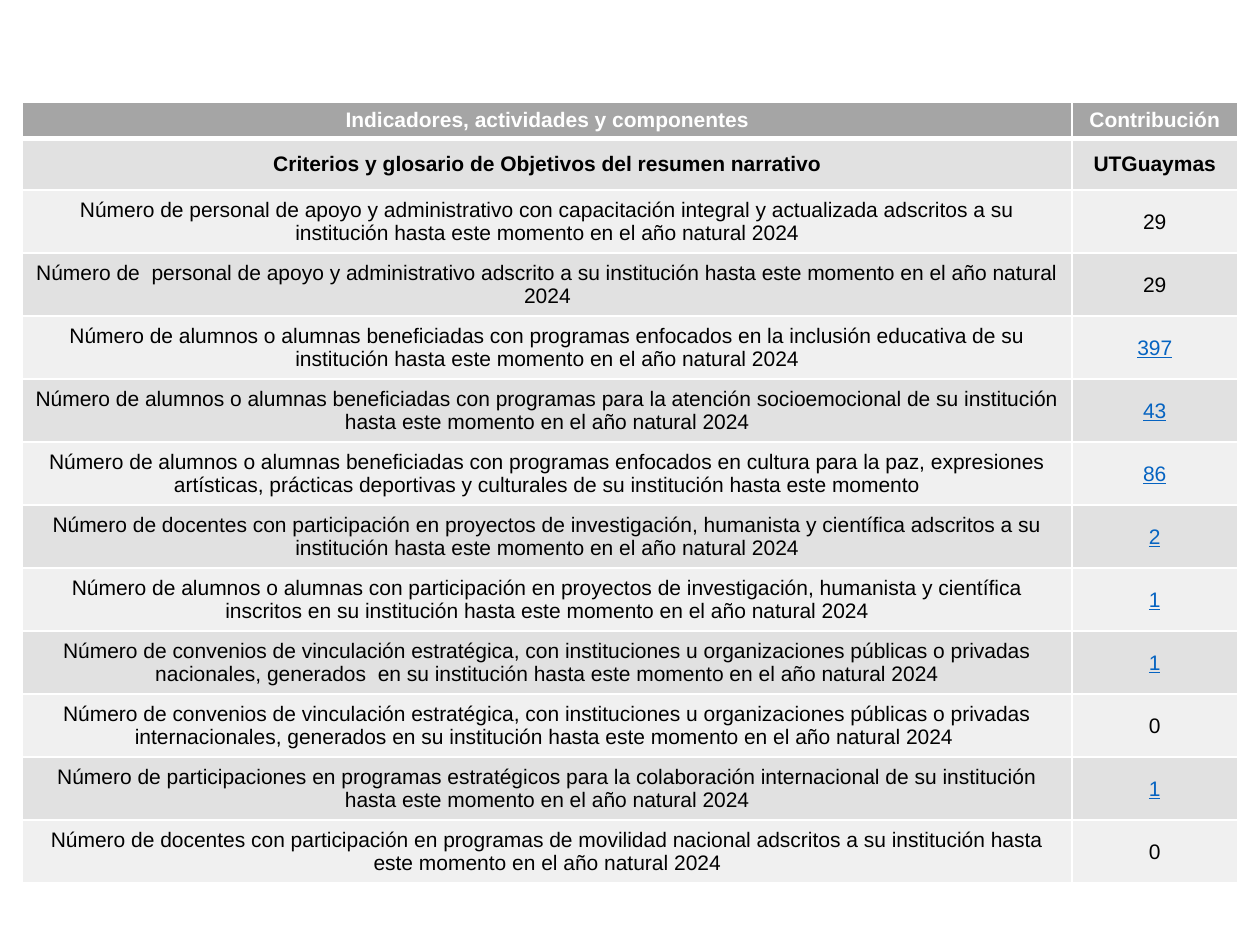
from lxml.etree import SubElement
from pptx import Presentation
from pptx.dml.color import RGBColor
from pptx.enum.text import MSO_ANCHOR, PP_ALIGN
from pptx.oxml.ns import qn
from pptx.util import Inches, Pt


def rgb(value):
    return RGBColor.from_string(value)


def add_border(tc_pr, side, points):
    ln = SubElement(tc_pr, qn(f"a:ln{side}"), w=str(Pt(points)))
    fill = SubElement(ln, qn("a:solidFill"))
    SubElement(fill, qn("a:srgbClr"), val="FFFFFF")


prs = Presentation()
prs.slide_width, prs.slide_height = Inches(10), Inches(7.5)
s = prs.slides.add_slide(prs.slide_layouts[6])

# Content: label, value, whether the value is styled as a link
until = "hasta este momento en el año natural 2024"
support = "Número de personal de apoyo y administrativo"
students = "Número de alumnos o alumnas"
teachers = "Número de docentes con participación en"
research = "proyectos de investigación, humanista y científica"
agreements = ("Número de convenios de vinculación estratégica, con instituciones "
              "u organizaciones públicas o privadas")
rows = [
    ("Indicadores, actividades y componentes", "Contribución", False),
    ("Criterios y glosario de Objetivos del resumen narrativo", "UTGuaymas", False),
    (f"{support} con capacitación integral y actualizada adscritos a su institución {until}",
     "29", False),
    (f"Número de  personal de apoyo y administrativo adscrito a su institución {until}",
     "29", False),
    (f"{students} beneficiadas con programas enfocados en la inclusión educativa "
     f"de su institución {until}", "397", True),
    (f"{students} beneficiadas con programas para la atención socioemocional "
     f"de su institución {until}", "43", True),
    (f"{students} beneficiadas con programas enfocados en cultura para la paz, expresiones "
     "artísticas, prácticas deportivas y culturales de su institución hasta este momento",
     "86", True),
    (f"{teachers} {research} adscritos a su institución {until}", "2", True),
    (f"{students} con participación en {research} inscritos en su institución {until}",
     "1", True),
    (f"{agreements} nacionales, generados  en su institución {until}", "1", True),
    (f"{agreements} internacionales, generados en su institución {until} ", "0", False),
    ("Número de participaciones en programas estratégicos para la colaboración "
     f"internacional de su institución {until}", "1", True),
    (f"{teachers} programas de movilidad nacional adscritos a su institución {until}",
     "0", False),
]

# Table grid
widths = [8.33, 1.31]
heights = [0.29, 0.41] + [0.5] * (len(rows) - 2)
table = s.shapes.add_table(len(rows), len(widths), Inches(0.18), Inches(0.81),
                           Inches(sum(widths)), Inches(sum(heights))).table
for column, width in zip(table.columns, widths):
    column.width = Inches(width)
for row, height in zip(table.rows, heights):
    row.height = Inches(height)

# Cells: grey header, bold subheader, then alternating bands
for i, (label, value, linked) in enumerate(rows):
    band = "A5A5A5" if i == 0 else ("F0F0F0", "E1E1E1")[i % 2]
    for j, text in enumerate((label, value)):
        is_link = linked and j == 1
        cell = table.cell(i, j)
        tc_pr = cell._tc.get_or_add_tcPr()
        for side in "LRTB":
            heavy = (i, side) in ((0, "B"), (1, "T"))
            add_border(tc_pr, side, 3 if heavy else 1)
        cell.fill.solid()
        cell.fill.fore_color.rgb = rgb(band)
        cell.vertical_anchor = MSO_ANCHOR.MIDDLE
        p = cell.text_frame.paragraphs[0]
        p.alignment = PP_ALIGN.CENTER
        r = p.add_run()
        r.text = text
        style = {"name": "Arial", "size": Pt(12), "bold": i < 2, "underline": is_link}
        for name, setting in style.items():
            setattr(r.font, name, setting)
        color = "FFFFFF" if i == 0 else "0563C1" if is_link else "000000"
        r.font.color.rgb = rgb(color)

prs.save("out.pptx")
